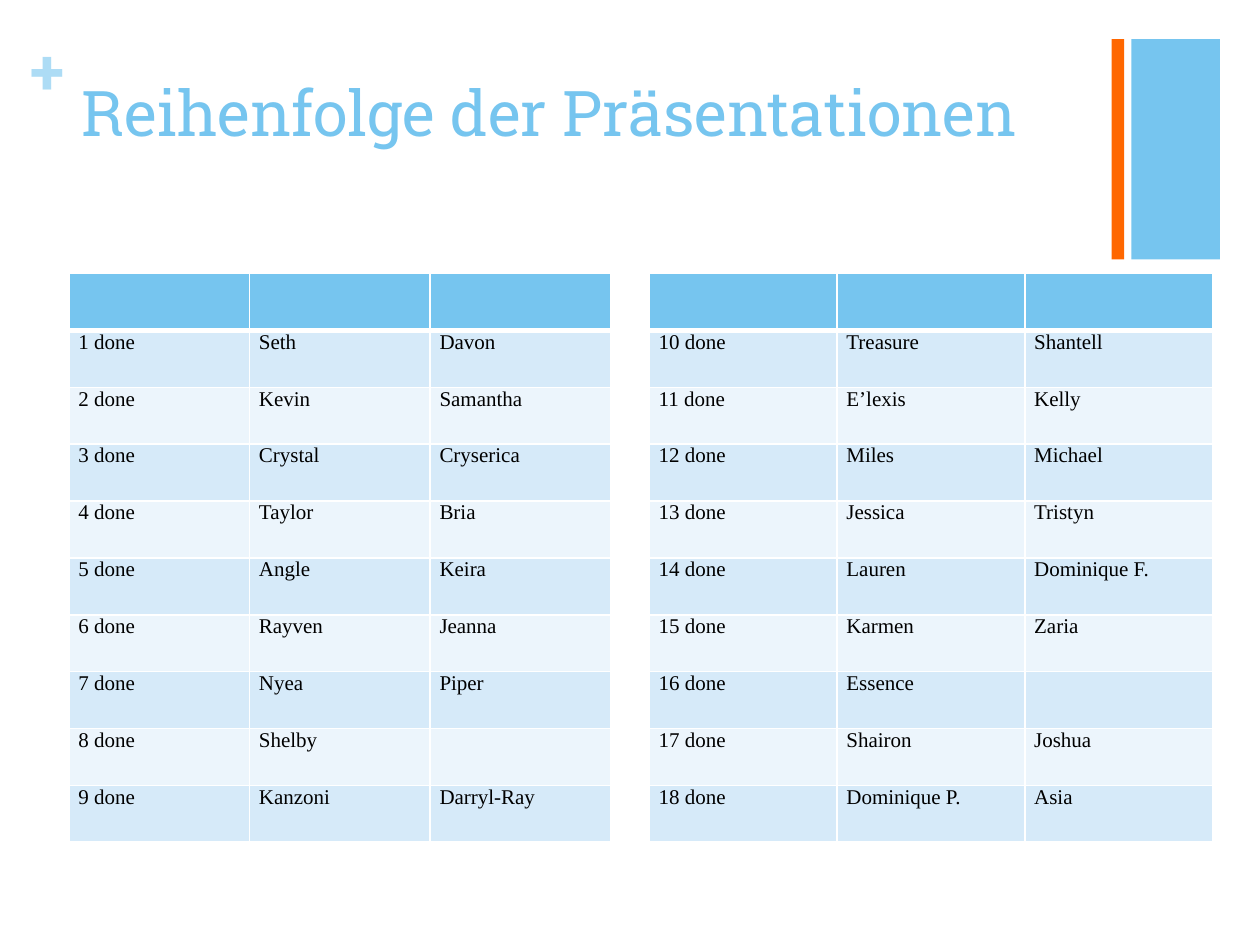
from lxml import etree
from pptx import Presentation
from pptx.dml.color import RGBColor
from pptx.enum.shapes import MSO_SHAPE
from pptx.enum.text import MSO_ANCHOR, PP_ALIGN
from pptx.oxml.ns import qn
from pptx.util import Pt

RECTANGLE = MSO_SHAPE.RECTANGLE
TOP = MSO_ANCHOR.TOP
LEFT = PP_ALIGN.LEFT

HEADING_FONT = "Roboto Slab"
TABLE_FONT = "Times New Roman"
BLUE = "76C5EF"
PALE_BLUE = "ADDCF5"
ORANGE = "FF6700"
WHITE = "FFFFFF"
BLACK = "000000"
BANDS = ("D6EAF9", "ECF5FC")

TABLE_TOP = 156.4
ROW_HEIGHT = 32.5

FIRST_PAIRS = [
    ("Seth", "Davon"),
    ("Kevin", "Samantha"),
    ("Crystal", "Cryserica"),
    ("Taylor", "Bria"),
    ("Angle", "Keira"),
    ("Rayven", "Jeanna"),
    ("Nyea", "Piper"),
    ("Shelby", ""),
    ("Kanzoni", "Darryl-Ray"),
]
SECOND_PAIRS = [
    ("Treasure", "Shantell"),
    ("E’lexis", "Kelly"),
    ("Miles", "Michael"),
    ("Jessica", "Tristyn"),
    ("Lauren", "Dominique F."),
    ("Karmen", "Zaria"),
    ("Essence", ""),
    ("Shairon", "Joshua"),
    ("Dominique P.", "Asia"),
]


def set_fill(item, color):
    item.fill.solid()
    item.fill.fore_color.rgb = RGBColor.from_string(color)


def set_font(font, name, size, color, bold=False):
    font.name = name
    font.size = Pt(size)
    font.bold = bold
    font.color.rgb = RGBColor.from_string(color)


def add_bar(slide, left, width, color):
    bar = slide.shapes.add_shape(RECTANGLE, Pt(left), Pt(22.3), Pt(width), Pt(126))
    bar.shadow.inherit = False
    set_fill(bar, color)
    bar.line.fill.background()


def add_plus(slide):
    box = slide.shapes.add_textbox(Pt(17.3), Pt(18), Pt(21), Pt(44))
    frame = box.text_frame
    frame.word_wrap = True
    frame.margin_left = frame.margin_top = frame.margin_right = frame.margin_bottom = 0
    frame.text = "+"
    set_font(frame.paragraphs[0].font, HEADING_FONT, 36, PALE_BLUE, bold=True)


def set_title(slide, text):
    title = slide.shapes.title
    title.left, title.top, title.width, title.height = Pt(39.6), Pt(38.2), Pt(594.7), Pt(87.8)
    frame = title.text_frame
    frame.vertical_anchor = TOP
    frame.text = text
    paragraph = frame.paragraphs[0]
    paragraph.alignment = LEFT
    set_font(paragraph.font, HEADING_FONT, 36, BLUE)


def set_borders(cell, top, bottom):
    """Draw white borders; top and bottom are widths in points."""
    properties = cell._tc.get_or_add_tcPr()
    for tag, width in (("a:lnL", 1), ("a:lnR", 1), ("a:lnT", top), ("a:lnB", bottom)):
        line = etree.SubElement(properties, qn(tag), w=str(Pt(width)))
        fill = etree.SubElement(line, qn("a:solidFill"))
        etree.SubElement(fill, qn("a:srgbClr"), val=WHITE)


def fill_cell(cell, text):
    cell.margin_left = cell.margin_right = Pt(5.4)
    cell.margin_top = cell.margin_bottom = 0
    cell.text = text
    set_font(cell.text_frame.paragraphs[0].font, TABLE_FONT, 12, BLACK)


def add_order_table(slide, left, column_width, first_number, pairs):
    """Add a blank header row and one numbered row for each pair."""
    rows = [("", "", "")]
    rows += [(f"{number} done", *pair) for number, pair in enumerate(pairs, first_number)]
    table = slide.shapes.add_table(
        len(rows), 3, Pt(left), Pt(TABLE_TOP), Pt(3 * column_width), Pt(len(rows) * ROW_HEIGHT)
    ).table
    for column in table.columns:
        column.width = Pt(column_width)
    for row_index, texts in enumerate(rows):
        table.rows[row_index].height = Pt(ROW_HEIGHT)
        color = BANDS[(row_index - 1) % 2] if row_index else BLUE
        for column_index, text in enumerate(texts):
            cell = table.cell(row_index, column_index)
            set_borders(cell, 3 if row_index == 1 else 1, 3 if row_index == 0 else 1)
            set_fill(cell, color)
            if text:
                fill_cell(cell, text)


def main():
    presentation = Presentation()
    presentation.slide_width, presentation.slide_height = Pt(720), Pt(540)
    slide = presentation.slides.add_slide(presentation.slide_layouts[5])
    add_bar(slide, 646.5, 50.6, BLUE)
    add_bar(slide, 635.2, 7.2, ORANGE)
    add_plus(slide)
    set_title(slide, "Reihenfolge der Präsentationen")
    add_order_table(slide, 371, 107.3, 10, SECOND_PAIRS)
    add_order_table(slide, 39.4, 103.2, 1, FIRST_PAIRS)
    presentation.save("out.pptx")


if __name__ == "__main__":
    main()
